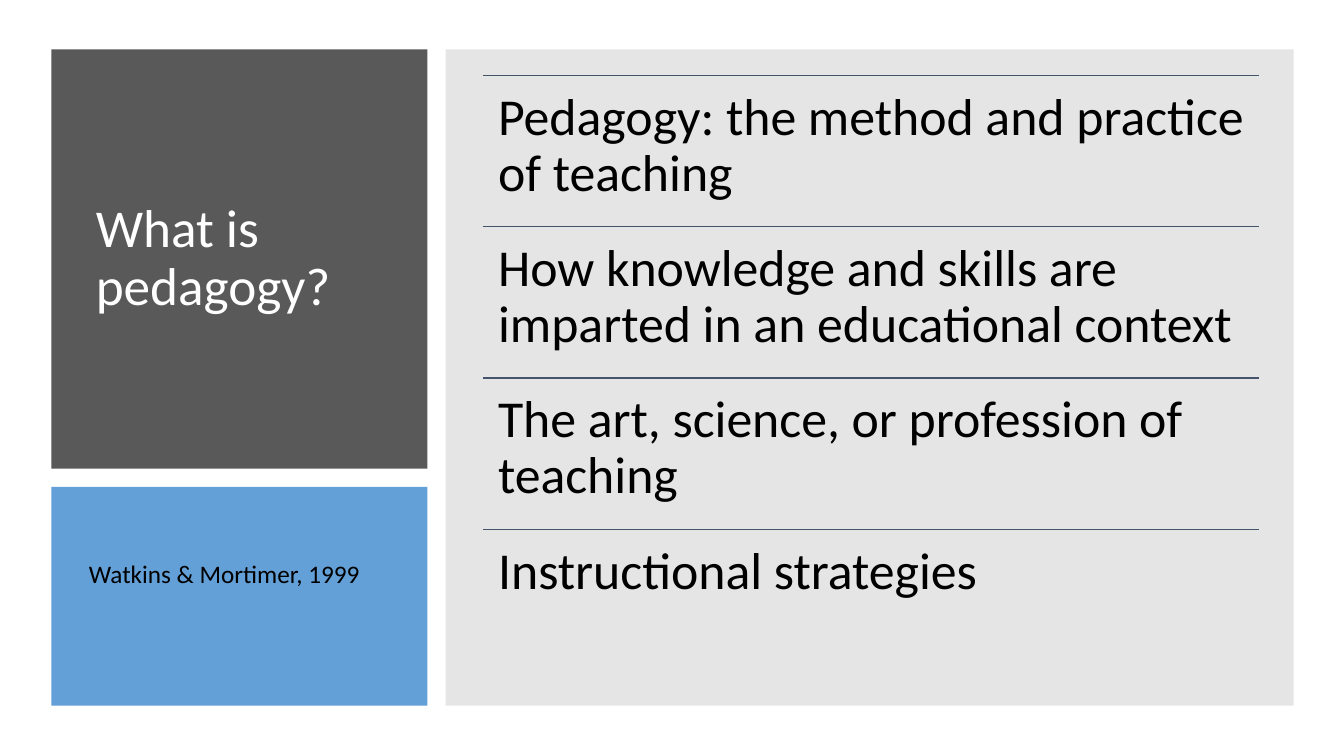
from lxml import etree
from pptx import Presentation
from pptx.dml.color import RGBColor
from pptx.enum.shapes import MSO_CONNECTOR, MSO_SHAPE
from pptx.enum.text import MSO_ANCHOR, MSO_AUTO_SIZE, PP_ALIGN
from pptx.oxml.ns import qn
from pptx.util import Inches, Pt

RECTANGLE, STRAIGHT = MSO_SHAPE.RECTANGLE, MSO_CONNECTOR.STRAIGHT
TOP, MIDDLE = MSO_ANCHOR.TOP, MSO_ANCHOR.MIDDLE
LEFT, CENTER = PP_ALIGN.LEFT, PP_ALIGN.CENTER
NO_FIT = MSO_AUTO_SIZE.NONE

CHARCOAL = RGBColor(0x59, 0x59, 0x59)
BLUE = RGBColor(0x5B, 0x9B, 0xD5)
GRAY = RGBColor(0x80, 0x80, 0x80)
SLATE = RGBColor(0x44, 0x54, 0x6A)
WHITE = RGBColor(0xFF, 0xFF, 0xFF)
BLACK = RGBColor(0, 0, 0)

TITLE = "What is pedagogy?"
CITATION = "Watkins & Mortimer, 1999"
DEFINITIONS = [
    "Pedagogy: the method and practice of teaching",
    "How knowledge and skills are imparted in an educational context",
    "The art, science, or profession of teaching",
    "Instructional strategies",
]

# (left, top, width, height), colour, opacity in percent
PANELS = [
    ((0.51, 0.49, 3.73, 4.16), CHARCOAL, 100),
    ((0.51, 4.83, 3.73, 2.17), BLUE, 95),
    ((4.42, 0.49, 8.41, 6.51), GRAY, 20),
]
TITLE_AREA = (0.85, 0.8, 3.11, 3.54)
CITATION_AREA = (0.76, 5.49, 2.93, 0.4)
LIST_LEFT, LIST_TOP, LIST_WIDTH, ROW_HEIGHT = 4.79, 0.75, 7.7, 1.5
ROW_INSET = 0.15


def inches(*lengths):
    return [Inches(length) for length in lengths]


def add_panel(slide, area, color, opacity):
    panel = slide.shapes.add_shape(RECTANGLE, *inches(*area))
    panel.shadow.inherit = False
    panel.line.fill.background()
    panel.fill.solid()
    panel.fill.fore_color.rgb = color
    if opacity < 100:
        color_node = panel._element.spPr.find(".//" + qn("a:srgbClr"))
        etree.SubElement(color_node, qn("a:alpha"), val=str(opacity * 1000))


def add_rule(slide, top):
    right = LIST_LEFT + LIST_WIDTH
    rule = slide.shapes.add_connector(STRAIGHT, *inches(LIST_LEFT, top, right, top))
    rule.line.color.rgb = SLATE
    rule.line.width = Pt(1)
    etree.SubElement(rule._element.spPr, qn("a:effectLst"))


def write(box, text, size, color, align=LEFT, spacing=0.9, anchor=TOP, inset=None):
    frame = box.text_frame
    frame.text = text
    frame_format = {"word_wrap": True, "auto_size": NO_FIT, "vertical_anchor": anchor}
    if inset is not None:
        for side in ("left", "top", "right", "bottom"):
            frame_format["margin_" + side] = Inches(inset)
    for name, value in frame_format.items():
        setattr(frame, name, value)
    para = frame.paragraphs[0]
    para.alignment, para.line_spacing = align, spacing
    font = para.runs[0].font
    font.name, font.size = "Calibri", Pt(size)
    font.color.rgb = color


def main():
    deck = Presentation()
    deck.slide_width, deck.slide_height = inches(13.33, 7.5)
    slide = deck.slides.add_slide(deck.slide_layouts[5])

    for panel in PANELS:
        add_panel(slide, *panel)

    title = slide.shapes.title
    title.left, title.top, title.width, title.height = inches(*TITLE_AREA)
    write(title, TITLE, 38, WHITE, anchor=MIDDLE)
    slide.shapes._spTree.append(title._element)  # bring in front of the panels

    for row, definition in enumerate(DEFINITIONS):
        top = LIST_TOP + row * ROW_HEIGHT
        add_rule(slide, top)
        box = slide.shapes.add_textbox(*inches(LIST_LEFT, top, LIST_WIDTH, ROW_HEIGHT))
        write(box, definition, 37, BLACK, inset=ROW_INSET)

    citation = slide.shapes.add_textbox(*inches(*CITATION_AREA))
    write(citation, CITATION, 18, BLACK, align=CENTER, spacing=1.0)

    deck.save("out.pptx")


if __name__ == "__main__":
    main()
